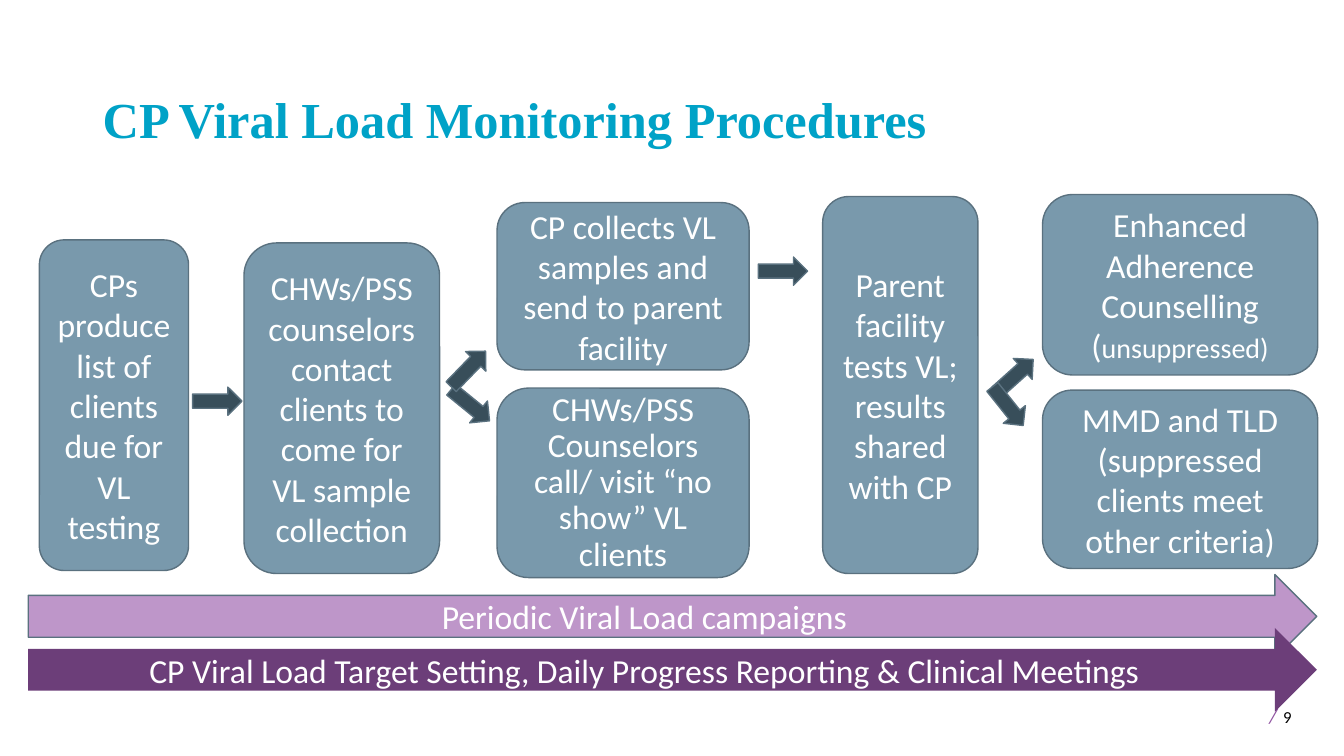
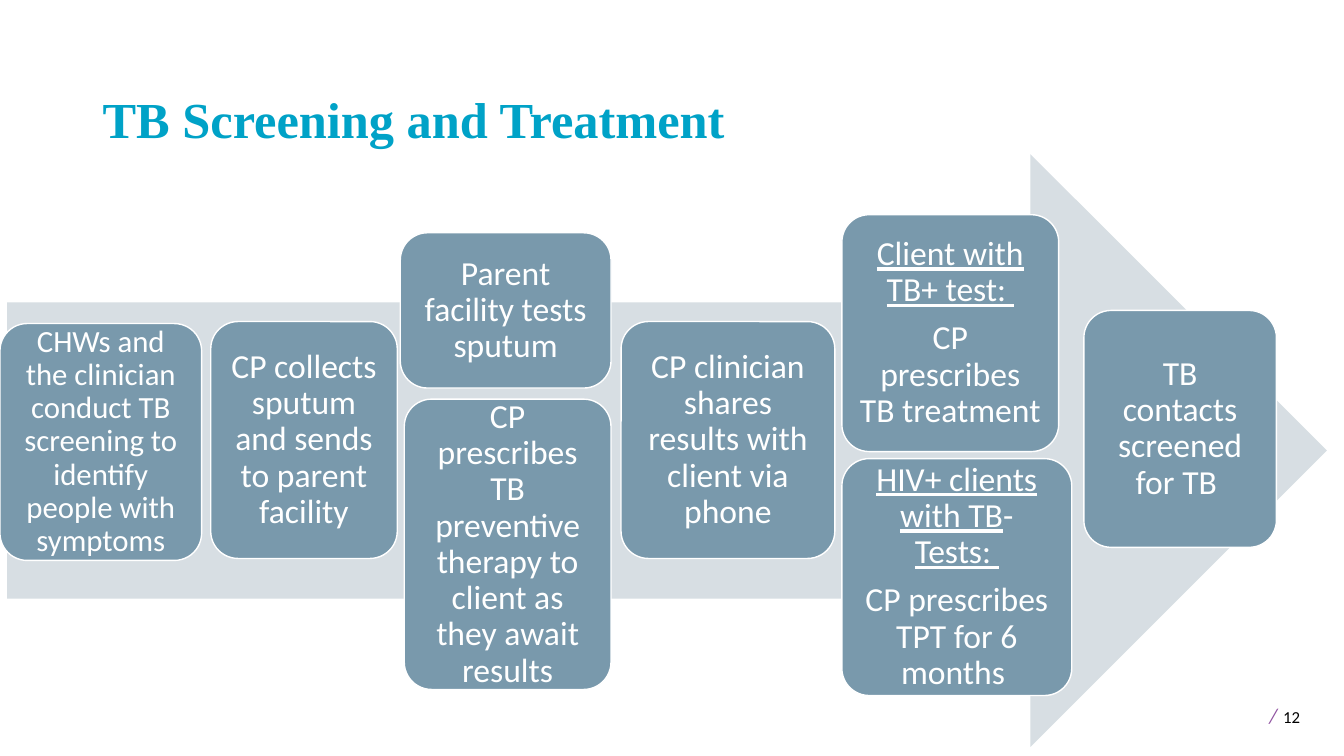
from pptx import Presentation
from pptx.dml.color import RGBColor
from pptx.enum.shapes import MSO_SHAPE as Shape
from pptx.enum.text import MSO_ANCHOR as Anchor, PP_ALIGN as Align
from pptx.util import Pt

PX = 9144  # one px is a hundredth of an inch
COLORS = {
    "title": "00A2C7", "box": "7999AC", "outline": "5A717F", "step": "384E5A",
    "campaign": "BE96C9", "target": "6C3E79", "backdrop": "D7DEE3",
    "slash": "9053A1", "white": "FFFFFF", "black": "000000",
}
BODY_FONT, TITLE_FONT = "Calibri", "Times New Roman"
CORNER = 27        # corner radius of the boxes in the TB flow
CORNER_INSET = 8   # text margin that this corner already gives


def color(name):
    return RGBColor.from_string(COLORS[name])


def write(shape, paragraphs, *, size=24, font=BODY_FONT, ink="white", bold=False,
          align=Align.CENTER, anchor=Anchor.MIDDLE, insets=(10, 5, 10, 5),
          spacing=None, after=None):
    """Fill a shape; a paragraph is a string or a list of strings and (text, format) runs."""
    frame = shape.text_frame
    frame.word_wrap = True
    frame.vertical_anchor = anchor
    (frame.margin_left, frame.margin_top,
     frame.margin_right, frame.margin_bottom) = [side * PX for side in insets]
    for index, runs in enumerate(paragraphs):
        paragraph = frame.add_paragraph() if index else frame.paragraphs[0]
        paragraph.alignment = align
        if spacing:
            paragraph.line_spacing = spacing
        if after:
            paragraph.space_after = Pt(after)
        for item in [runs] if isinstance(runs, str) else runs:
            text, style = (item, {}) if isinstance(item, str) else item
            run = paragraph.add_run()
            run.text = text
            run.font.name = font
            run.font.size = Pt(style.get("size", size))
            run.font.bold = bold
            run.font.italic = style.get("italic", False)
            run.font.underline = style.get("underline", False)
            run.font.color.rgb = color(style.get("ink", ink))


class Deck:
    def __init__(self):
        self.file = Presentation()
        self.file.slide_width = 1333 * PX
        self.file.slide_height = 750 * PX
        self.slide = None

    def new_slide(self, number):
        self.slide = self.file.slides.add_slide(self.file.slide_layouts[6])
        footer = self.text_area(1243, 688, 87, 40)
        write(footer, [[("/", {"size": 15, "ink": "slash", "italic": True}), " ",
                        (number, {"size": 12})]],
              size=18, ink="black", align=Align.LEFT, anchor=Anchor.TOP,
              insets=(16, 5, 0, 5))

    def text_area(self, *place):
        return self.slide.shapes.add_textbox(*[length * PX for length in place])

    def title(self, text):
        write(self.text_area(92, 40, 1150, 113), [text], size=36, font=TITLE_FONT,
              ink="title", bold=True, align=Align.LEFT, anchor=Anchor.BOTTOM, spacing=0.9)

    def shape(self, kind, place, fill, outline=None):
        shape = self.slide.shapes.add_shape(kind, *[length * PX for length in place])
        shape.shadow.inherit = False
        shape.fill.solid()
        shape.fill.fore_color.rgb = color(fill)
        if outline:
            shape.line.color.rgb = color(outline)
            shape.line.width = Pt(1)
        else:
            shape.line.fill.background()
        return shape

    def arrow(self, place, fill, outline=None, angle=0):
        arrow = self.shape(Shape.RIGHT_ARROW, place, fill, outline)
        arrow.rotation = angle
        return arrow

    def banner(self, top, text, fill, outline=None):
        arrow = self.arrow((28, top, 1278, 83), fill, outline)
        write(arrow, [text], insets=(10, 0, 45, 0))

    def box(self, place, paragraphs, outline="outline", corner=None, **style):
        box = self.shape(Shape.ROUNDED_RECTANGLE, place, "box", outline)
        if corner:
            box.adjustments[0] = corner / min(place[2:])
        write(box, paragraphs, **style)

    def flow_box(self, place, inset, paragraphs, size=24):
        self.box(place, paragraphs, outline="white", corner=CORNER, size=size,
                 insets=[inset - CORNER_INSET] * 4, spacing=0.9, after=size * 0.35)


def viral_load(deck):
    deck.new_slide("9")
    deck.title("CP Viral Load Monitoring Procedures")

    # Ongoing activities along the bottom
    deck.banner(570, "Periodic Viral Load campaigns", "campaign", "outline")
    deck.banner(623, "CP Viral Load Target Setting, Daily Progress Reporting "
                     "& Clinical Meetings", "target")

    # Procedure steps
    for place, paragraphs in [
        ((39, 238, 148, 328), ["CPs produce list of clients due for VL testing"]),
        ((242, 241, 194, 328),
         ["CHWs/PSS counselors contact clients to come for VL sample collection"]),
        ((493, 201, 250, 166), ["CP collects VL samples and send to parent facility"]),
        ((816, 195, 154, 374),
         ["Parent facility tests VL; results shared with CP"]),
        ((1034, 193, 273, 179),
         ["Enhanced Adherence Counselling", ["(", ("unsuppressed)", {"size": 20})]]),
        ((1034, 387, 273, 177),
         ["MMD and TLD (suppressed clients meet other criteria)"]),
    ]:
        deck.box(place, paragraphs)
    deck.box((493, 385, 250, 188),
             ["CHWs/PSS Counselors call/ visit “no show” VL clients"],
             spacing=0.9, after=8.4)

    # Arrows between the steps
    for left, top, angle in [(982, 359, 318), (752, 255, 0), (442, 388, 39.2),
                             (440, 352, 314.1), (191, 384, 0), (975, 389, 51.4)]:
        deck.arrow((left, top, 49, 28), "step", "outline", angle)


def tb_screening(deck):
    underlined = {"underline": True}
    deck.new_slide("12")
    deck.arrow((7, 153, 1309, 588), "backdrop")

    # Patient flow
    deck.flow_box((0, 321, 200, 235), 16,
                  ["CHWs and the clinician conduct TB screening to identify "
                   "people with symptoms"], size=22)
    for place, inset, paragraphs in [
        ((209, 319, 185, 235), 17, ["CP collects sputum and sends to parent facility"]),
        ((397, 231, 209, 154), 16, ["Parent facility tests sputum"]),
        ((401, 396, 205, 288), 16,
         ["CP prescribes TB preventive therapy to client as they await results"]),
        ((616, 319, 212, 235), 18,
         ["CP clinician shares results with client via phone"]),
        ((835, 213, 215, 235), 18,
         [[("Client with TB+ test: ", underlined)], "CP prescribes TB treatment"]),
        ((1075, 308, 191, 235), 19, ["TB contacts screened for TB "]),
        ((835, 455, 228, 235), 21,
         [[("HIV+ clients with TB", underlined), "- ", ("Tests: ", underlined)],
          "CP prescribes TPT for 6 months "]),
    ]:
        deck.flow_box(place, inset, paragraphs)

    deck.title("TB Screening and Treatment")


def main():
    deck = Deck()
    viral_load(deck)
    tb_screening(deck)
    deck.file.save("out.pptx")


if __name__ == "__main__":
    main()
